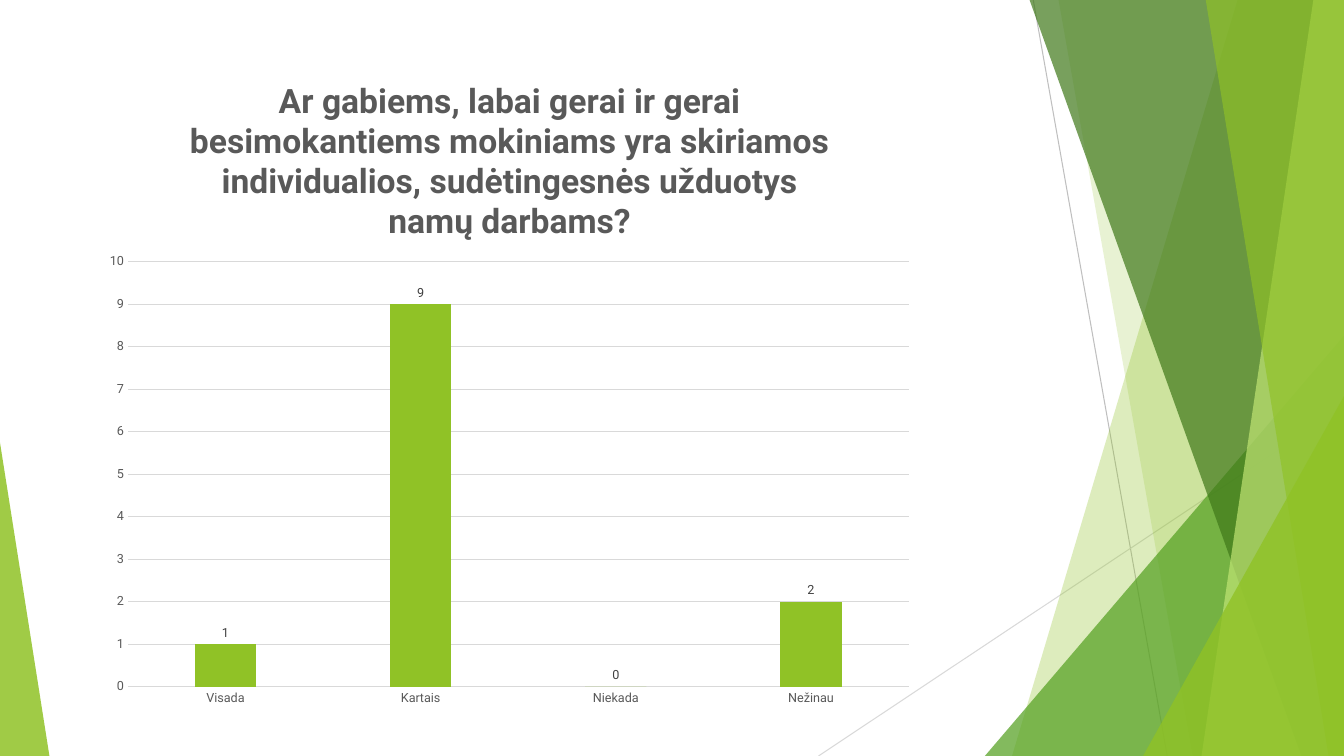
"""Build a survey slide: a column chart among translucent green facets."""
from dataclasses import dataclass

from lxml.etree import SubElement
from pptx import Presentation
from pptx.chart.data import CategoryChartData
from pptx.dml.color import RGBColor
from pptx.enum.chart import XL_CHART_TYPE, XL_LABEL_POSITION, XL_TICK_MARK
from pptx.enum.shapes import MSO_CONNECTOR, MSO_SHAPE
from pptx.oxml import parse_xml
from pptx.oxml.ns import nsdecls, qn
from pptx.util import Inches, Pt


@dataclass(frozen=True)
class Theme:
    font: str = "Roboto"
    lime: str = "90C226"
    green: str = "54A021"
    forest: str = "3F7819"
    pale: str = "C0E474"
    ray: str = "BFBFBF"
    rule: str = "D9D9D9"
    text: str = "595959"
    label: str = "404040"
    title_size: int = 24
    chart_size: int = 10
    small_size: int = 9
    rule_width: float = 0.75


theme = Theme()


def format_font(font, size, color, bold=False):
    font.name = theme.font
    font.size = Pt(size)
    font.bold = bold
    font.color.rgb = RGBColor.from_string(color)


def write_text(text_frame, text, **style):
    run = text_frame.paragraphs[0].add_run()
    run.text = text
    format_font(run.font, **style)


presentation = Presentation()
presentation.slide_width = Inches(13.33)
presentation.slide_height = Inches(7.5)
slide = presentation.slides.add_slide(presentation.slide_layouts[6])
column = presentation.slide_width / 100
row = presentation.slide_height / 100

rays = [
    (76.88, 0, 86.85, 100, theme.ray),
    (100, 53.73, 60.9, 100, theme.rule),
]
for start_x, start_y, end_x, end_y, color in rays:
    ray = slide.shapes.add_connector(
        MSO_CONNECTOR.STRAIGHT,
        round(start_x * column), round(start_y * row),
        round(end_x * column), round(end_y * row),
    )
    ray.line.color.rgb = RGBColor.from_string(color)
    ray.line.width = Pt(theme.rule_width)
    SubElement(ray._element.spPr, qn("a:effectLst"))

# Band: top and bottom of its left edge. Triangle: left, top, width, apex.
facets = [
    ("band", (92.1, 75.3), theme.lime, 30),
    ("band", (78.75, 88.73), theme.lime, 20),
    ("triangle", (73.28, 44.4, 26.72, 1), theme.green, 72),
    ("band", (76.58, 96.83), theme.forest, 70),
    ("band", (97.73, 89.4), theme.pale, 70),
    ("band", (89.7, 98.85), theme.lime, 65),
    ("triangle", (85.05, 52.4, 14.95, 1), theme.lime, 80),
    ("triangle", (0, 58.53, 3.68, 0), theme.lime, 85),
]
band_top = -0.13
for kind, geometry, color, opacity in facets:
    if kind == "band":
        top_x, bottom_x = geometry
        corners = [(top_x, band_top), (100, band_top), (100, 100), (bottom_x, 100)]
        points = [(round(x * column), round(y * row)) for x, y in corners]
        builder = slide.shapes.build_freeform(*points[0])
        builder.add_line_segments(points[1:], close=True)
        facet = builder.convert_to_shape()
    else:
        left, top, width, apex = geometry
        facet = slide.shapes.add_shape(
            MSO_SHAPE.ISOSCELES_TRIANGLE,
            round(left * column), round(top * row),
            round(width * column), round((100 - top) * row),
        )
        facet.adjustments[0] = apex
    facet.shadow.inherit = False
    facet.line.fill.background()
    facet.fill.solid()
    facet.fill.fore_color.rgb = RGBColor.from_string(color)
    fill_color = facet._element.spPr.find(qn("a:solidFill"))[0]
    SubElement(fill_color, qn("a:alpha"), val=str(opacity * 1000))

survey = CategoryChartData()
survey.categories = ["Visada", "Kartais", "Niekada", "Nežinau"]
survey.add_series("Series 1", [1, 9, 0, 2])
chart = slide.shapes.add_chart(
    XL_CHART_TYPE.COLUMN_CLUSTERED,
    round(7.05 * column), round(7.07 * row),
    round(61.73 * column), round(88.27 * row), survey,
).chart
format_font(chart.font, theme.chart_size, theme.text)
chart.has_legend = False
chart.has_title = True
chart.chart_title.include_in_layout = False
write_text(
    chart.chart_title.text_frame,
    "Ar gabiems, labai gerai ir gerai besimokantiems mokiniams yra skiriamos "
    "individualios, sudėtingesnės užduotys namų darbams?",
    size=theme.title_size, color=theme.text, bold=True,
)

for axis in (chart.category_axis, chart.value_axis):
    axis.major_tick_mark = XL_TICK_MARK.NONE
    axis.minor_tick_mark = XL_TICK_MARK.NONE
    format_font(axis.tick_labels.font, theme.small_size, theme.text)
chart.value_axis.minimum_scale = 0
chart.value_axis.maximum_scale = 10
chart.value_axis.major_unit = 1
chart.value_axis.format.line.fill.background()
for line in (chart.category_axis.format.line, chart.value_axis.major_gridlines.format.line):
    line.color.rgb = RGBColor.from_string(theme.rule)
    line.width = Pt(theme.rule_width)

plot = chart.plots[0]
plot.gap_width = 219
plot.overlap = -27
plot.vary_by_categories = False
series = plot.series[0]
series.format.fill.solid()
series.format.fill.fore_color.rgb = RGBColor.from_string(theme.lime)
labels = series.data_labels
labels.show_value = True
labels.position = XL_LABEL_POSITION.OUTSIDE_END
format_font(labels.font, theme.small_size, theme.label)

plot_area = chart._chartSpace.chart.plotArea
for old_layout in plot_area.findall(qn("c:layout")):
    plot_area.remove(old_layout)
plot_area.insert(0, parse_xml(
    f'<c:layout {nsdecls("c")}><c:manualLayout><c:layoutTarget val="inner"/>'
    '<c:xMode val="edge"/><c:yMode val="edge"/><c:x val="0.04"/><c:y val="0.312"/>'
    '<c:w val="0.941"/><c:h val="0.637"/></c:manualLayout></c:layout>'
))

presentation.save("out.pptx")
